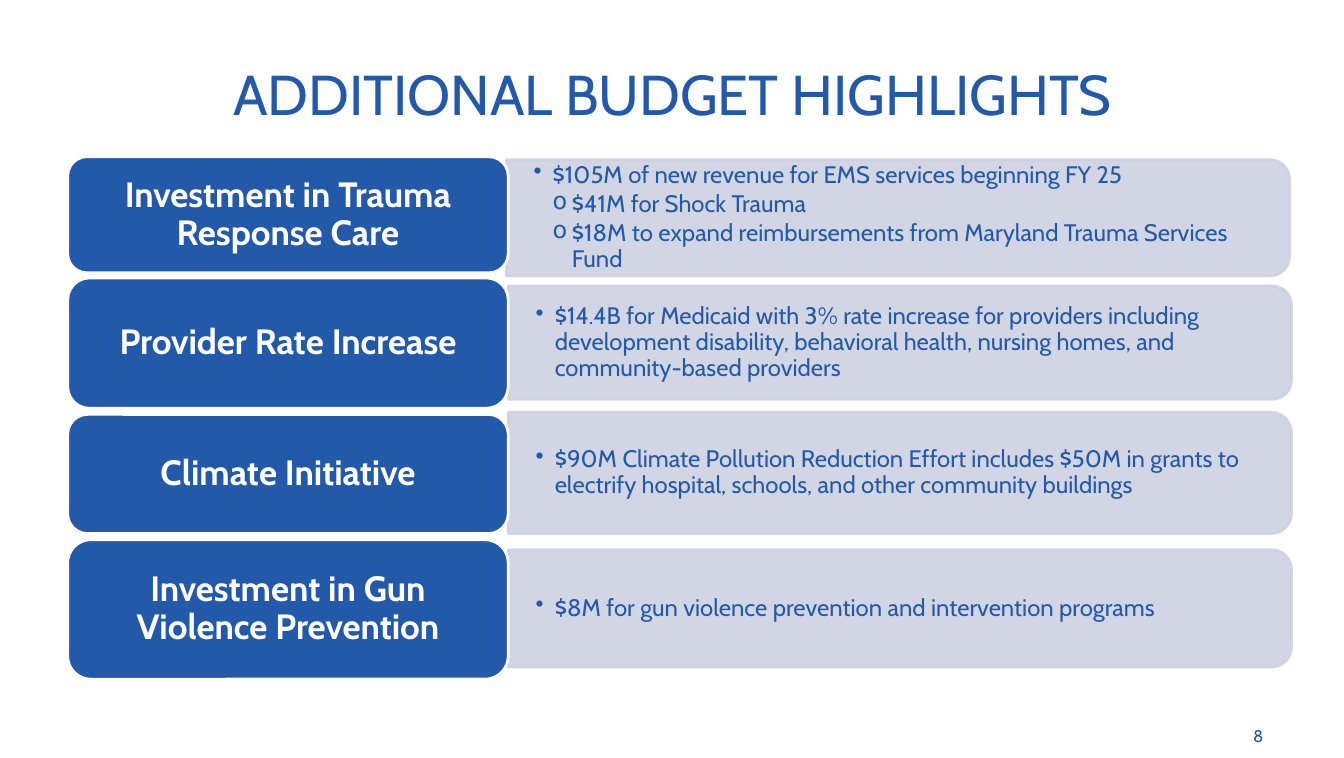
from pptx import Presentation
from pptx.dml.color import RGBColor
from pptx.enum import shapes, text
from pptx.oxml.xmlchemy import OxmlElement
from pptx.util import Inches, Pt

BLUE = RGBColor(0x23, 0x59, 0xA9)
PALE = RGBColor(0xCD, 0xD1, 0xE2)
WHITE = RGBColor(0xFF, 0xFF, 0xFF)
FONT = "Cabin"

TITLE = "ADDITIONAL BUDGET HIGHLIGHTS"
PAGE_NUMBER = "8"
LABEL_LEFT, LABEL_WIDTH = 0.67, 4.36
PANEL_WIDTH = 7.75
INDENT = 0.19

HIGHLIGHTS = [
    {"label": "Investment in Trauma Response Care",
     "label_box": (1.55, 1.15), "panel_box": (5.01, 1.58, 1.15),
     "points": [(1, "$105M of new revenue for EMS services beginning FY 25"),
                (2, "$41M for Shock Trauma"),
                (2, "$18M to expand reimbursements from Maryland Trauma Services Fund")]},
    {"label": "Provider Rate Increase",
     "label_box": (2.75, 1.29), "panel_box": (5.03, 2.83, 1.12),
     "points": [(1, "$14.4B for Medicaid with 3% rate increase for providers including "
                    "development disability, behavioral health, nursing homes, and "
                    "community-based providers")]},
    {"label": "Climate Initiative",
     "label_box": (4.1, 1.18), "panel_box": (5.03, 4.08, 1.2),
     "points": [(1, "$90M Climate Pollution Reduction Effort includes $50M in grants to "
                    "electrify hospital, schools, and other community buildings")]},
    {"label": "Investment in Gun Violence Prevention",
     "label_box": (5.34, 1.38), "panel_box": (5.03, 5.44, 1.16),
     "points": [(1, "$8M for gun violence prevention and intervention programs")]},
]


def set_frame(frame, horizontal=0.1, vertical=0.05):
    frame.word_wrap = True
    frame.auto_size = text.MSO_AUTO_SIZE.NONE
    frame.vertical_anchor = text.MSO_ANCHOR.MIDDLE
    frame.margin_left = frame.margin_right = Inches(horizontal)
    frame.margin_top = frame.margin_bottom = Inches(vertical)


def write(paragraph, content, size, color, alignment, bold=False):
    paragraph.text = content
    paragraph.alignment = alignment
    font = paragraph.runs[0].font
    font.name, font.size, font.bold = FONT, Pt(size), bold
    font.color.rgb = color


def add_block(slide, kind, box, fill, line):
    shape = slide.shapes.add_shape(kind, *map(Inches, box))
    shape.shadow.inherit = False
    shape.fill.solid()
    shape.fill.fore_color.rgb = fill
    shape.line.color.rgb = line
    shape.line.width = Pt(2)
    return shape


def add_panel(slide, left, top, height):
    box = (left + (PANEL_WIDTH - height) / 2, top + (height - PANEL_WIDTH) / 2,
           height, PANEL_WIDTH)
    panel = add_block(slide, shapes.MSO_SHAPE.ROUND_2_SAME_RECTANGLE, box, PALE, PALE)
    panel.rotation = 90
    for color in panel._element.spPr.xpath(".//a:srgbClr"):
        alpha = OxmlElement("a:alpha")
        alpha.set("val", "90000")
        color.append(alpha)


def add_points(slide, left, top, height, points):
    frame = slide.shapes.add_textbox(Inches(left), Inches(top), Inches(7.7), Inches(height)).text_frame
    set_frame(frame, 0.27, 0.14)
    for index, (level, content) in enumerate(points):
        paragraph = frame.add_paragraph() if index else frame.paragraphs[0]
        properties = paragraph._p.get_or_add_pPr()
        properties.set("marL", str(Inches(INDENT * level)))
        properties.set("indent", str(-Inches(INDENT)))
        bullet = OxmlElement("a:buChar")
        bullet.set("char", "•" if level == 1 else "o")
        properties.append(bullet)
        paragraph.level = level
        paragraph.line_spacing = 0.9
        paragraph.space_after = Pt(2.5)
        write(paragraph, content, 17, BLUE, text.PP_ALIGN.LEFT)


def add_label(slide, top, height, content):
    label = add_block(slide, shapes.MSO_SHAPE.ROUNDED_RECTANGLE,
                      (LABEL_LEFT, top, LABEL_WIDTH, height), BLUE, WHITE)
    set_frame(label.text_frame)
    paragraph = label.text_frame.paragraphs[0]
    paragraph.line_spacing = 0.9
    write(paragraph, content, 25, WHITE, text.PP_ALIGN.CENTER, True)


def main():
    presentation = Presentation()
    presentation.slide_width, presentation.slide_height = Inches(13.3), Inches(7.5)
    slide = presentation.slides.add_slide(presentation.slide_layouts[5])

    title = slide.shapes.title
    title.left, title.top, title.width, title.height = map(Inches, (0.67, 0.3, 11.97, 1.25))
    set_frame(title.text_frame)
    write(title.text_frame.paragraphs[0], TITLE, 40, BLUE, text.PP_ALIGN.CENTER)

    for highlight in HIGHLIGHTS:
        add_panel(slide, *highlight["panel_box"])
        add_points(slide, *highlight["panel_box"], highlight["points"])
        add_label(slide, *highlight["label_box"], highlight["label"])

    number = slide.shapes.add_textbox(*map(Inches, (11.94, 7.08, 0.66, 0.4)))
    set_frame(number.text_frame)
    write(number.text_frame.paragraphs[0], PAGE_NUMBER, 12, BLUE, text.PP_ALIGN.RIGHT)
    presentation.save("out.pptx")


if __name__ == "__main__":
    main()
